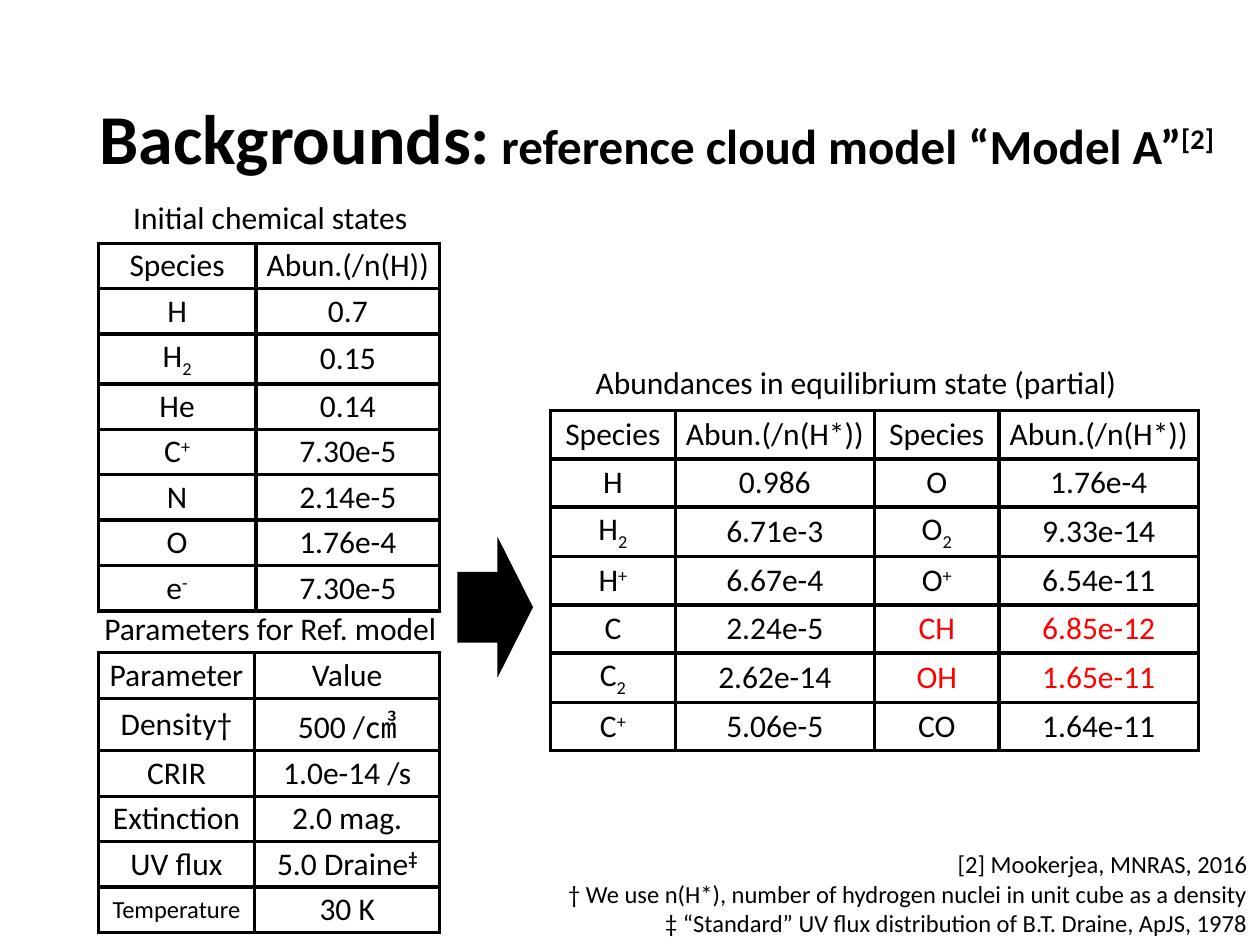
from dataclasses import dataclass

from lxml import etree
from pptx import Presentation
from pptx.dml.color import RGBColor
from pptx.enum.shapes import MSO_SHAPE
from pptx.enum.text import MSO_ANCHOR, PP_ALIGN
from pptx.oxml.ns import qn
from pptx.util import Pt

RIGHT_ARROW = MSO_SHAPE.RIGHT_ARROW
TOP, MIDDLE = MSO_ANCHOR.TOP, MSO_ANCHOR.MIDDLE
LEFT, CENTER, RIGHT = PP_ALIGN.LEFT, PP_ALIGN.CENTER, PP_ALIGN.RIGHT

FONT = "Calibri"
BLACK, WHITE, RED = "000000", "FFFFFF", "FF0000"
BORDER_WIDTH = 2.25
SUPERSCRIPT, SUBSCRIPT = 30, -25


@dataclass(frozen=True)
class Span:
    text: str
    size: float = 18
    bold: bool = False
    color: str = BLACK
    shift: int = 0


@dataclass(frozen=True)
class Grid:
    left: float
    top: float
    widths: tuple[float, ...]
    row_height: float
    side_inset: float
    rows: list[list]


@dataclass(frozen=True)
class Label:
    left: float
    top: float
    width: float
    height: float
    lines: list
    align: PP_ALIGN = CENTER
    anchor: MSO_ANCHOR = TOP
    spacing: float = 1


def rgb(code: str) -> RGBColor:
    return RGBColor.from_string(code)


def sub(base: str, mark: str) -> list[Span]:
    return [Span(base), Span(mark, shift=SUBSCRIPT)]


def sup(base: str, mark: str, bold: bool = False) -> list[Span]:
    return [Span(base), Span(mark, bold=bold, shift=SUPERSCRIPT)]


def red(text: str) -> list[Span]:
    return [Span(text, color=RED)]


def write(paragraph, text: str, *, size: float, bold: bool, color: str, shift: int) -> None:
    run = paragraph.add_run()
    run.text = text
    run.font.name = FONT
    run.font.size = Pt(size)
    run.font.bold = bold
    run.font.color.rgb = rgb(color)
    if shift:
        run.font._element.set("baseline", str(shift * 1000))


def write_line(paragraph, content, align: PP_ALIGN) -> None:
    paragraph.alignment = align
    for span in [Span(content)] if isinstance(content, str) else content:
        write(paragraph, span.text, size=span.size, bold=span.bold,
              color=span.color, shift=span.shift)


def draw_label(slide, label: Label) -> None:
    box = slide.shapes.add_textbox(Pt(label.left), Pt(label.top), Pt(label.width), Pt(label.height))
    frame = box.text_frame
    frame.word_wrap = True
    frame.vertical_anchor = label.anchor
    for index, line in enumerate(label.lines):
        paragraph = frame.add_paragraph() if index else frame.paragraphs[0]
        paragraph.line_spacing = label.spacing
        write_line(paragraph, line, label.align)


def draw_borders(cell) -> None:
    properties = cell._tc.get_or_add_tcPr()
    for index, side in enumerate(("a:lnL", "a:lnR", "a:lnT", "a:lnB")):
        line = etree.Element(qn(side), w=str(Pt(BORDER_WIDTH)))
        solid = etree.SubElement(line, qn("a:solidFill"))
        etree.SubElement(solid, qn("a:srgbClr"), val=BLACK)
        properties.insert(index, line)


def draw_grid(slide, grid: Grid) -> None:
    table = slide.shapes.add_table(
        len(grid.rows), len(grid.widths), Pt(grid.left), Pt(grid.top),
        Pt(sum(grid.widths)), Pt(grid.row_height * len(grid.rows))).table
    table.first_row = table.horz_banding = False
    for column, width in zip(table.columns, grid.widths):
        column.width = Pt(width)
    for row, contents in zip(table.rows, grid.rows):
        row.height = Pt(grid.row_height)
        for cell, content in zip(row.cells, contents):
            cell.fill.solid()
            cell.fill.fore_color.rgb = rgb(WHITE)
            cell.vertical_anchor = MIDDLE
            cell.margin_left = cell.margin_right = Pt(grid.side_inset)
            cell.margin_top = cell.margin_bottom = Pt(2)
            draw_borders(cell)
            write_line(cell.text_frame.paragraphs[0], content, CENTER)


def draw_arrow(slide, left: float, top: float, width: float, height: float) -> None:
    arrow = slide.shapes.add_shape(RIGHT_ARROW, Pt(left), Pt(top), Pt(width), Pt(height))
    arrow.adjustments[0] = 0.5
    arrow.adjustments[1] = 0.47
    arrow.shadow.inherit = False
    arrow.fill.solid()
    arrow.fill.fore_color.rgb = rgb(BLACK)
    arrow.line.fill.background()


TITLE = Label(49.7, 28.8, 654.5, 104.4, [[
    Span("Backgrounds:", size=40, bold=True),
    Span(" reference cloud model “Model A”", size=28, bold=True),
    Span("[2]", size=28, bold=True, shift=SUPERSCRIPT),
]], align=LEFT, anchor=MIDDLE, spacing=0.9)

CAPTIONS = [
    Label(42.5, 109.4, 223.9, 29, ["Initial chemical states"]),
    Label(49.7, 344.2, 209.5, 29, ["Parameters for Ref. model"]),
    Label(299.5, 203.8, 379.4, 29, ["Abundances in equilibrium state (partial)"]),
]

FOOTNOTES = Label(304.6, 481.7, 415.4, 58.3, [[Span(note, size=14)] for note in (
    "[2] Mookerjea, MNRAS, 2016",
    "† We use n(H*), number of hydrogen nuclei in unit cube as a density",
    "‡ “Standard” UV flux distribution of B.T. Draine, ApJS, 1978",
)], align=RIGHT)

INITIAL_STATES = Grid(56.2, 139, (90, 105.1), 24.5, 3.6, [
    ["Species", "Abun.(/n(H))"],
    ["H", "0.7"],
    [sub("H", "2"), "0.15"],
    ["He", "0.14"],
    [sup("C", "+"), "7.30e-5"],
    ["N", "2.14e-5"],
    ["O", "1.76e-4"],
    [sup("e", "-"), "7.30e-5"],
])

PARAMETERS = Grid(56.2, 373, (89.3, 105.8), 24, 4.3, [
    ["Parameter", "Value"],
    ["Density†", "500 /㎤"],
    ["CRIR", "1.0e-14 /s"],
    ["Extinction", "2.0 mag."],
    ["UV flux", sup("5.0 Draine", "‡", bold=True)],
    [[Span("Temperature", size=14)], "30 K"],
])

EQUILIBRIUM = Grid(314.6, 234.7, (71.3, 113.8) * 2, 27.5, 3.6, [
    ["Species", "Abun.(/n(H*))"] * 2,
    ["H", "0.986", "O", "1.76e-4"],
    [sub("H", "2"), "6.71e-3", sub("O", "2"), "9.33e-14"],
    [sup("H", "+"), "6.67e-4", sup("O", "+"), "6.54e-11"],
    ["C", "2.24e-5", red("CH"), red("6.85e-12")],
    [sub("C", "2"), "2.62e-14", red("OH"), red("1.65e-11")],
    [sup("C", "+"), "5.06e-5", "CO", "1.64e-11"],
])


def main() -> None:
    deck = Presentation()
    deck.slide_width, deck.slide_height = Pt(720), Pt(540)
    slide = deck.slides.add_slide(deck.slide_layouts[6])
    for grid in (PARAMETERS, EQUILIBRIUM, INITIAL_STATES):
        draw_grid(slide, grid)
    draw_arrow(slide, 261.4, 306.7, 43.2, 80.6)
    for label in (TITLE, *CAPTIONS, FOOTNOTES):
        draw_label(slide, label)
    deck.save("out.pptx")


if __name__ == "__main__":
    main()
